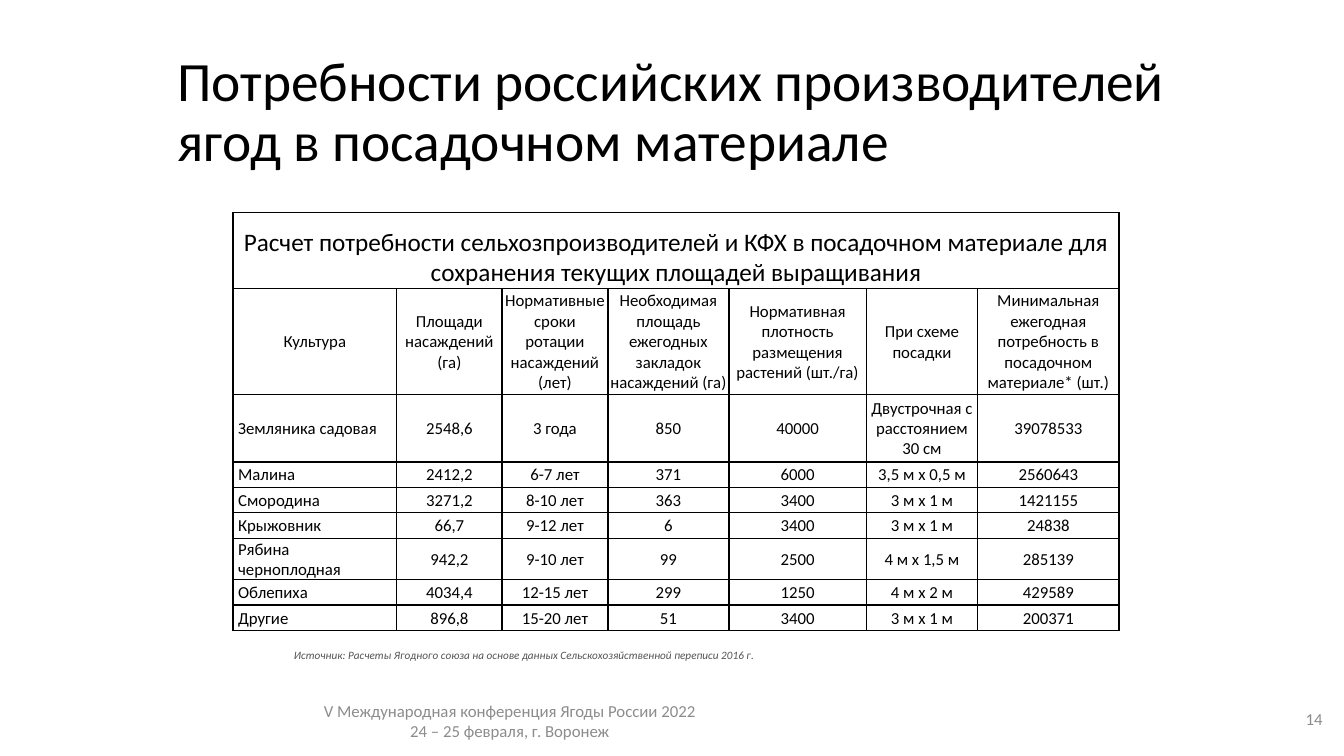
import pptx
import pptx.util
import pptx.dml.color
import pptx.enum.text
import pptx.oxml
import pptx.oxml.ns

Cm = pptx.util.Cm
ALIGN = pptx.enum.text.PP_ALIGN
MIDDLE = pptx.enum.text.MSO_ANCHOR.MIDDLE
BOTTOM = pptx.enum.text.MSO_ANCHOR.BOTTOM

BLACK, GREY, DARK_GREY = "000000", "8C8C8C", "535353"

COLUMN_WIDTHS = [4.13, 2.65, 2.67, 3.05, 3.46, 2.81, 3.56]
ROW_HEIGHTS = [1.91, 2.67, 1.7] + [0.64] * 6
TABLE_TITLE = ("Расчет потребности сельхозпроизводителей и КФХ в посадочном материале "
               "для сохранения текущих площадей выращивания")
HEADINGS = [
    "Культура",
    "Площади насаждений (га)",
    "Нормативные сроки ротации насаждений (лет)",
    "Необходимая площадь ежегодных закладок насаждений (га)",
    "Нормативная плотность размещения растений (шт./га)",
    "При схеме посадки",
    "Минимальная ежегодная потребность в посадочном материале* (шт.)",
]
CROPS = [
    ["Земляника садовая", "2548,6", "3 года", "850", "40000",
     "Двустрочная с расстоянием 30 см", "39078533"],
    ["Малина", "2412,2", "6-7 лет", "371", "6000", "3,5 м х 0,5 м", "2560643"],
    ["Смородина", "3271,2", "8-10 лет", "363", "3400", "3 м х 1 м", "1421155"],
    ["Крыжовник", "66,7", "9-12 лет", "6", "3400", "3 м х 1 м", "24838"],
    ["Рябина черноплодная", "942,2", "9-10 лет", "99", "2500", "4 м х 1,5 м", "285139"],
    ["Облепиха", "4034,4", "12-15 лет", "299", "1250", "4 м х 2 м", "429589"],
    ["Другие", "896,8", "15-20 лет", "51", "3400", "3 м х 1 м", "200371"],
]


def color(hex_string):
    return pptx.dml.color.RGBColor.from_string(hex_string)


def format_paragraph(paragraph, size, hex_color, alignment, italic=False):
    paragraph.alignment = alignment
    font = paragraph.font
    font.name = "Calibri"
    font.size = pptx.util.Pt(size)
    font.italic = italic
    font.color.rgb = color(hex_color)


def set_title(slide, text):
    title = slide.shapes.title
    title.left, title.top, title.width, title.height = Cm(4.22), Cm(1.02), Cm(25.65), Cm(3.68)
    frame = title.text_frame
    frame.text = text
    frame.word_wrap = True
    frame.auto_size = pptx.enum.text.MSO_AUTO_SIZE.NONE
    frame.vertical_anchor = MIDDLE
    paragraph = frame.paragraphs[0]
    paragraph.line_spacing = 0.9
    format_paragraph(paragraph, 39.6, BLACK, ALIGN.LEFT)


def add_text(slide, box, lines, size, hex_color, alignment, italic=False, inset=0.25):
    """Add a middle-anchored text box; box is left, top, width, height in cm."""
    frame = slide.shapes.add_textbox(*map(Cm, box)).text_frame
    frame.word_wrap = True
    frame.vertical_anchor = MIDDLE
    frame.margin_left = frame.margin_right = Cm(inset)
    frame.text = "\n".join(lines)
    for paragraph in frame.paragraphs:
        format_paragraph(paragraph, size, hex_color, alignment, italic)


def add_borders(cell):
    properties = cell._tc.get_or_add_tcPr()
    for side in ("lnL", "lnR", "lnT", "lnB"):
        properties.append(pptx.oxml.parse_xml(
            f'<a:{side} {pptx.oxml.ns.nsdecls("a")} w="12700"><a:solidFill>'
            f'<a:srgbClr val="{BLACK}"/></a:solidFill></a:{side}>'))


def fill_cell(cell, text, size=12, alignment=ALIGN.CENTER, anchor=MIDDLE):
    cell.text = text
    cell.vertical_anchor = anchor
    cell.margin_left = cell.margin_right = cell.margin_top = Cm(0.03)
    cell.margin_bottom = 0
    paragraph = cell.text_frame.paragraphs[0]
    if alignment == ALIGN.LEFT:
        paragraph._p.get_or_add_pPr().set("marL", str(Cm(0.1)))
    format_paragraph(paragraph, size, BLACK, alignment)


def add_demand_table(slide):
    frame = slide.shapes.add_table(
        len(ROW_HEIGHTS), len(COLUMN_WIDTHS), Cm(5.87), Cm(5.36),
        Cm(sum(COLUMN_WIDTHS)), Cm(sum(ROW_HEIGHTS)))
    table = frame.table
    table.first_row = table.horz_banding = False
    for column, width in zip(table.columns, COLUMN_WIDTHS):
        column.width = Cm(width)
    for row, height in zip(table.rows, ROW_HEIGHTS):
        row.height = Cm(height)
    for cell in table.iter_cells():
        add_borders(cell)
        cell.fill.background()

    table.cell(0, 0).merge(table.cell(0, len(COLUMN_WIDTHS) - 1))
    fill_cell(table.cell(0, 0), TABLE_TITLE, size=18, anchor=BOTTOM)
    for row_index, values in enumerate([HEADINGS] + CROPS, start=1):
        for column_index, value in enumerate(values):
            is_crop_name = row_index > 1 and column_index == 0
            fill_cell(table.cell(row_index, column_index), value,
                      alignment=ALIGN.LEFT if is_crop_name else ALIGN.CENTER)


def main():
    presentation = pptx.Presentation()
    presentation.slide_width, presentation.slide_height = Cm(33.87), Cm(19.05)
    slide = presentation.slides.add_slide(presentation.slide_layouts.get_by_name("Title Only"))
    set_title(slide, "Потребности российских производителей ягод в посадочном материале")
    add_text(slide, (5.38, 17.65, 14.94, 1.02),
             ["V Международная конференция Ягоды России 2022", "24 – 25 февраля, г. Воронеж"],
             12, GREY, ALIGN.CENTER)
    add_text(slide, (31.55, 17.6, 2.03, 1.02), ["14"], 12, GREY, ALIGN.RIGHT)
    add_demand_table(slide)
    add_text(slide, (7.26, 16.15, 12.42, 0.7),
             ["Источник: Расчеты Ягодного союза на основе данных "
              "Сельскохозяйственной переписи 2016 г."],
             8, DARK_GREY, ALIGN.LEFT, italic=True, inset=0.15)
    presentation.save("out.pptx")


if __name__ == "__main__":
    main()
